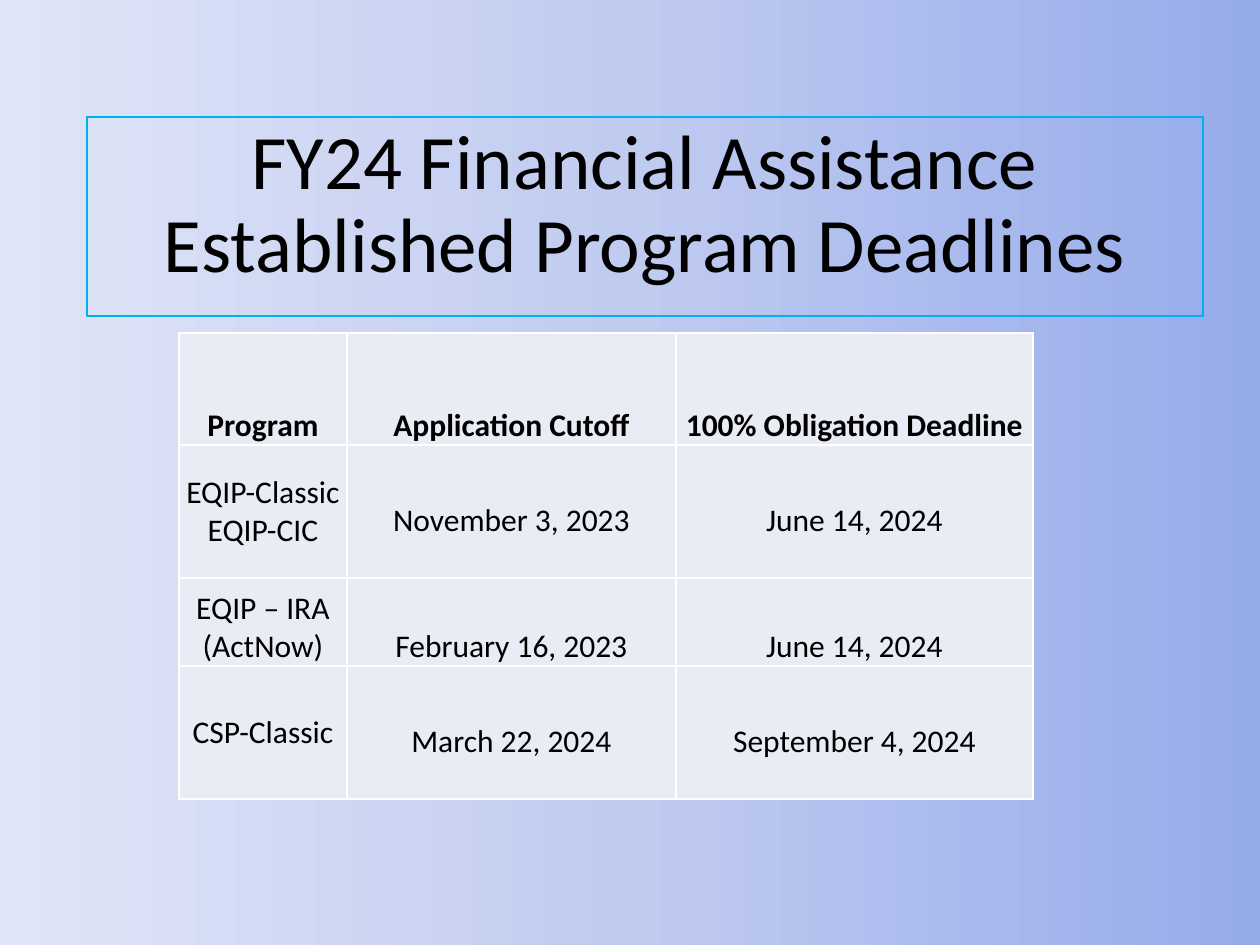
from copy import deepcopy

from lxml.etree import SubElement
from pptx import Presentation
from pptx.dml.color import RGBColor
from pptx.enum.text import MSO_ANCHOR, PP_ALIGN
from pptx.oxml.ns import qn
from pptx.util import Pt

SCALE = 914400 // 126
LINE = 38
COLS = [168, 329, 357]
ROWS = [112, 133, 88, 133]
DATA = [
    ["Program", "Application Cutoff", "100% Obligation Deadline"],
    ["EQIP-Classic\nEQIP-CIC", "November 3, 2023", "June 14, 2024"],
    ["EQIP – IRA (ActNow)", "February 16, 2023", "June 14, 2024"],
    ["CSP-Classic", "March 22, 2024", "September 4, 2024"],
]


def px(n):
    return n * SCALE


def rgb(code):
    return RGBColor.from_string(code)


def write(frame, text, size=18, bold=False, space=None):
    frame.word_wrap = True
    frame.text = text
    for para in frame.paragraphs:
        para.alignment = PP_ALIGN.CENTER
        para.line_spacing = space
        font = para.runs[0].font
        font.name, font.size, font.bold = "Calibri", Pt(size), bold
        font.color.rgb = rgb("000000")


def paint(slide):
    """Give the slide its three-stop gradient background."""
    fill = slide.background.fill
    fill.gradient()
    fill.gradient_angle = 180
    first = slide.element.find(".//" + qn("a:gs"))
    first.addnext(deepcopy(first))
    colors = ["96ABEA", "C0CBF0", "E0E5F7"]
    for i, (stop, color) in enumerate(zip(fill.gradient_stops, colors)):
        stop.position = i / 2
        stop.color.rgb = rgb(color)


def add_title(slide):
    box = slide.shapes.add_textbox(px(87), px(117), px(1116), px(199))
    box.line.color.rgb = rgb("00B0F0")
    box.line.width = Pt(0.75)
    box.text_frame.vertical_anchor = MSO_ANCHOR.TOP
    write(box.text_frame, "FY24 Financial Assistance Established Program Deadlines",
          size=44, space=0.9)


def edge(cell):
    """Draw white borders on all four sides of a cell."""
    props = cell._tc.get_or_add_tcPr()
    for i, side in enumerate(["lnL", "lnR", "lnT", "lnB"]):
        line = props.makeelement(qn("a:" + side), {"w": str(Pt(1))})
        fill = SubElement(line, qn("a:solidFill"))
        SubElement(fill, qn("a:srgbClr"), val="FFFFFF")
        props.insert(i, line)


def add_grid(slide):
    table = slide.shapes.add_table(
        len(ROWS), len(COLS), px(179), px(333), px(sum(COLS)), px(sum(ROWS))
    ).table
    for col, width in zip(table.columns, COLS):
        col.width = px(width)
    for r, (height, texts) in enumerate(zip(ROWS, DATA)):
        table.rows[r].height = px(height)
        tall = r in (1, 3)
        for c, text in enumerate(texts):
            cell = table.cell(r, c)
            cell.margin_left = cell.margin_right = cell.margin_top = px(1)
            # Dates in the tall rows sit one line above the bottom edge.
            cell.margin_bottom = px(LINE) if tall and c else 0
            cell.vertical_anchor = (
                MSO_ANCHOR.MIDDLE if tall and not c else MSO_ANCHOR.BOTTOM)
            cell.fill.solid()
            cell.fill.fore_color.rgb = rgb("E9EBF5")
            edge(cell)
            write(cell.text_frame, text, bold=r == 0)


def main():
    deck = Presentation()
    deck.slide_width, deck.slide_height = px(1260), px(945)
    slide = deck.slides.add_slide(deck.slide_layouts[6])
    paint(slide)
    add_title(slide)
    add_grid(slide)
    deck.save("out.pptx")


if __name__ == "__main__":
    main()
